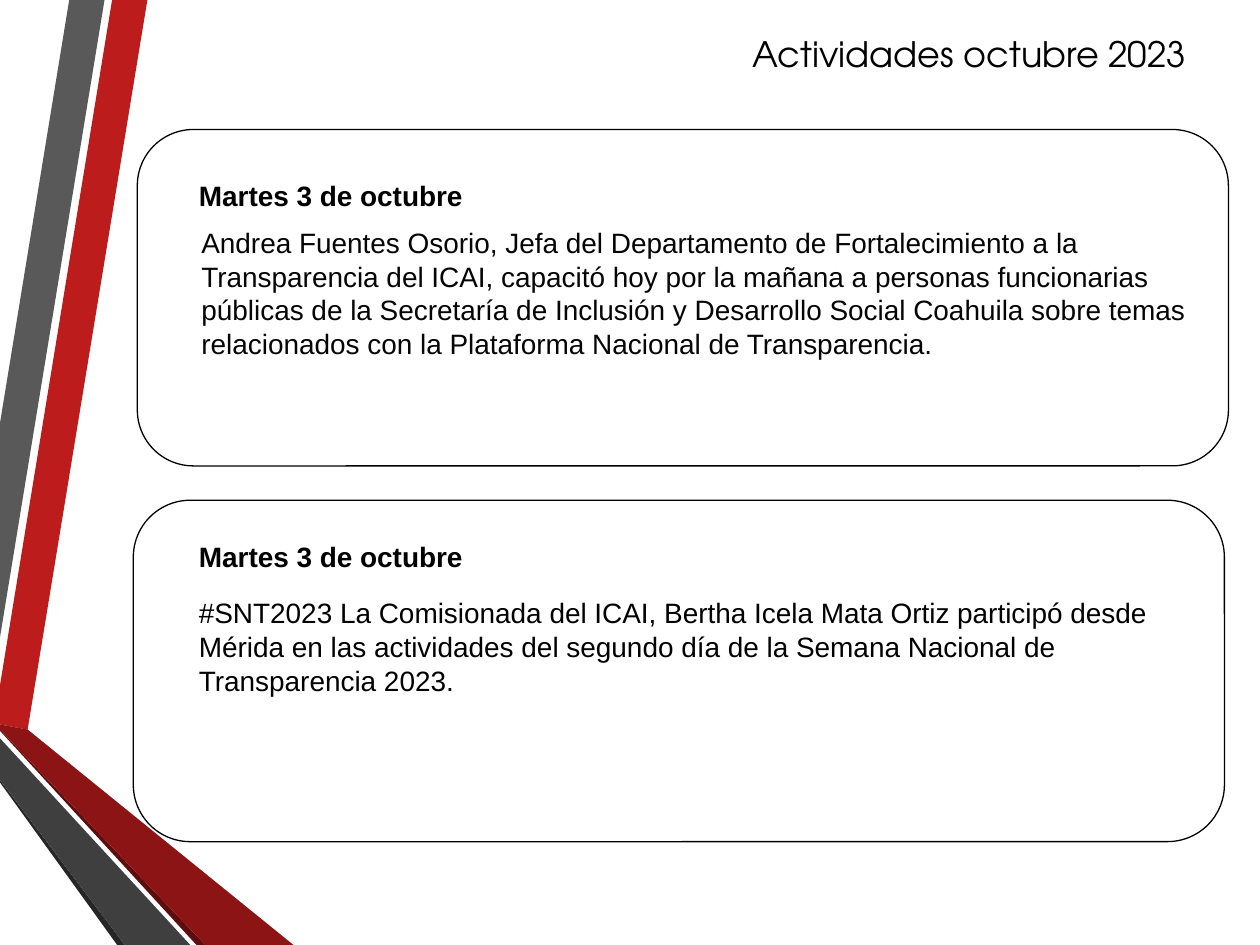
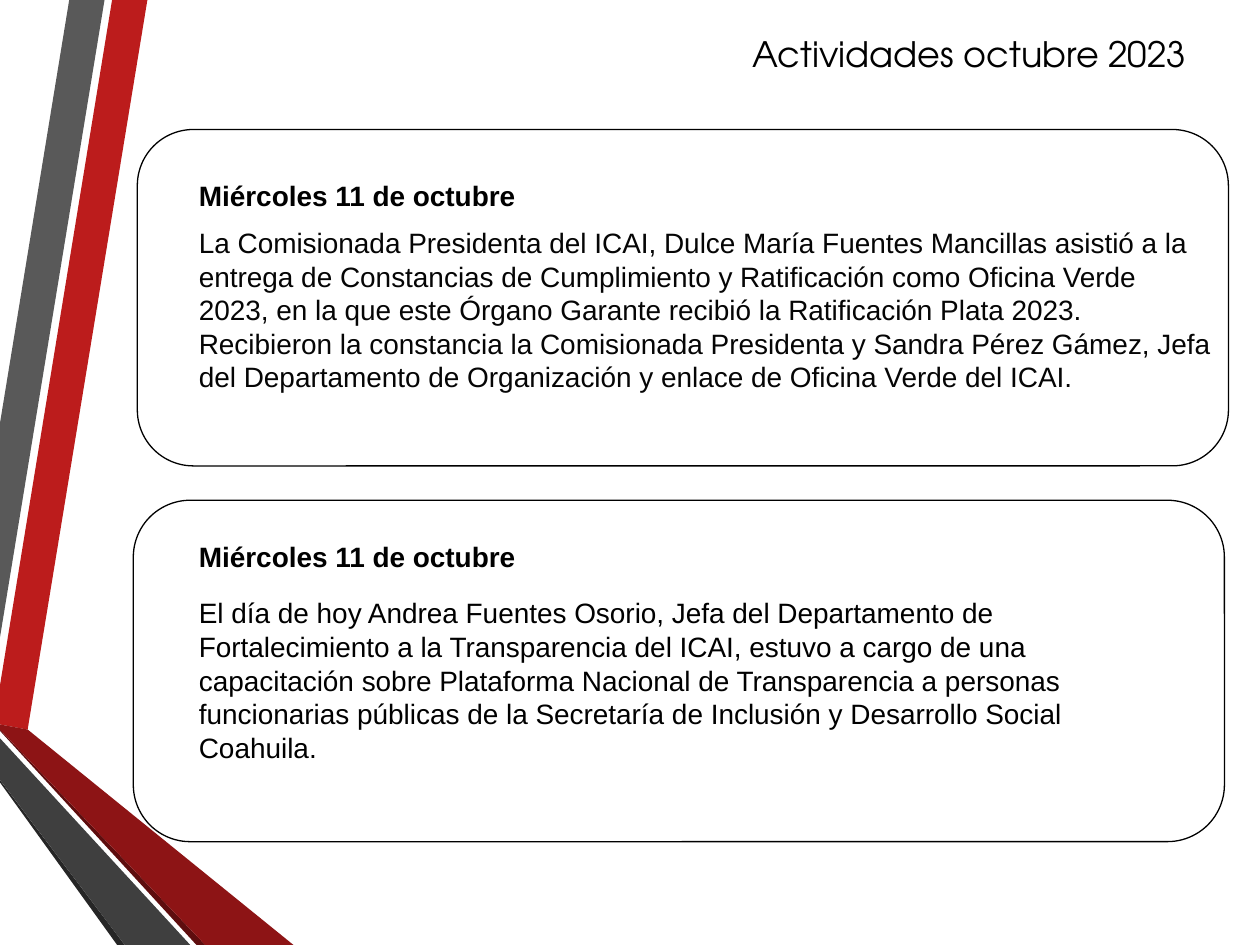
import pptx
import pptx.util
import pptx.dml.color
import pptx.enum.shapes
import pptx.enum.text

Pt = pptx.util.Pt
RGB = pptx.dml.color.RGBColor
ALIGN = pptx.enum.text.PP_ALIGN

BLACK = RGB(0x00, 0x00, 0x00)
INK = RGB(0x05, 0x05, 0x05)
RED = RGB(0xBC, 0x1C, 0x1C)
MAROON = RGB(0x8D, 0x14, 0x15)
WINE = RGB(0x5E, 0x0D, 0x0E)
GREY = RGB(0x59, 0x59, 0x59)
SLATE = RGB(0x3F, 0x3F, 0x3F)
COAL = RGB(0x26, 0x26, 0x26)

WIDTH, HEIGHT = 720, 540
BEND = (15.84, 416.88)  # where the red band folds
RIBBONS = [
    (RED, [(0, 391.68), (0, 414), BEND, (84.24, 0), (64.08, 0)]),
    (GREY, [(59.76, 0), (39.6, 0), (0, 241.92), (0, 364.32)]),
    (COAL, [(0, 445.68), (0, 447.12), (66.96, HEIGHT), (71.28, HEIGHT)]),
    (WINE, [(0, 416.88), (0, 417.6), (112.32, HEIGHT), (117.36, HEIGHT)]),
    (MAROON, [(0, 416.88), (117.36, HEIGHT), (167.76, HEIGHT), BEND, (0, 414)]),
    (SLATE, [(0, 445.68), (71.28, HEIGHT), (108.72, HEIGHT), (0, 421.92)]),
]

LEFT = 106.56
CARD_WIDTH = 623.5
TEXT_WIDTH = 567.36
WIDE = 593.28  # the upper text runs almost to the card's edge


class Deck:
    def __init__(self):
        self.prs = pptx.Presentation()
        self.prs.slide_width = Pt(WIDTH)
        self.prs.slide_height = Pt(HEIGHT)
        self.slide = None

    def page(self, title):
        """Start a slide with the side ribbons and its title."""
        self.slide = self.prs.slides.add_slide(self.prs.slide_layouts[6])
        for color, points in RIBBONS:
            self.ribbon(color, points)
        self.text(405.36, 15.12, 297.36, 31.68, [title], size=20,
                  font="TeX Gyre Adventor", align=ALIGN.CENTER)

    def ribbon(self, color, points):
        start, *rest = [(Pt(x), Pt(y)) for x, y in points]
        pen = self.slide.shapes.build_freeform(*start)
        pen.add_line_segments(rest, close=True)
        shape = pen.convert_to_shape()
        shape.shadow.inherit = False
        shape.fill.solid()
        shape.fill.fore_color.rgb = color
        shape.line.fill.background()

    def card(self, left, top, height):
        kind = pptx.enum.shapes.MSO_SHAPE.FLOWCHART_ALTERNATE_PROCESS
        shape = self.slide.shapes.add_shape(
            kind, Pt(left), Pt(top), Pt(CARD_WIDTH), Pt(height))
        shape.shadow.inherit = False
        shape.fill.background()
        shape.line.color.rgb = BLACK
        shape.line.width = Pt(0.75)

    def text(self, left, top, width, height, lines, size=16, font="Arial",
             color=BLACK, bold=False, align=ALIGN.LEFT):
        box = self.slide.shapes.add_textbox(
            Pt(left), Pt(top), Pt(width), Pt(height))
        frame = box.text_frame
        frame.word_wrap = True
        frame.text = "\n".join(lines)
        for para in frame.paragraphs:
            para.alignment = align
            para.font.size = Pt(size)
            para.font.name = font
            para.font.bold = bold
            para.font.color.rgb = color


PAGES = [
    {
        "date": "Martes 3 de octubre",
        "left": 108,
        "height": 84.96,
        "upper": [
            "Andrea Fuentes Osorio, Jefa del Departamento de Fortalecimiento "
            "a la Transparencia del ICAI, capacitó hoy por la mañana a "
            "personas funcionarias públicas de la Secretaría de Inclusión y "
            "Desarrollo Social Coahuila sobre temas relacionados con la "
            "Plataforma Nacional de Transparencia."],
        "lower": [
            "#SNT2023 La Comisionada del ICAI, Bertha Icela Mata Ortiz "
            "participó desde Mérida en las actividades del segundo día de la "
            "Semana Nacional de Transparencia 2023."],
    },
    {
        "date": "Miércoles 11 de octubre",
        "left": LEFT,
        "height": 104.4,
        "upper": [
            "La Comisionada Presidenta del ICAI, Dulce María Fuentes "
            "Mancillas asistió a la entrega de Constancias de Cumplimiento y "
            "Ratificación como Oficina Verde 2023, en la que este Órgano "
            "Garante recibió la Ratificación Plata 2023.",
            "Recibieron la constancia la Comisionada Presidenta y Sandra "
            "Pérez Gámez, Jefa del Departamento de Organización y enlace de "
            "Oficina Verde del ICAI."],
        "lower": [
            "El día de hoy Andrea Fuentes Osorio, Jefa del Departamento de "
            "Fortalecimiento a la Transparencia del ICAI, estuvo a cargo de "
            "una capacitación sobre Plataforma Nacional de Transparencia a "
            "personas funcionarias públicas de la Secretaría de Inclusión y "
            "Desarrollo Social Coahuila."],
    },
]


def main():
    deck = Deck()
    for page in PAGES:
        deck.page("Actividades octubre 2023")
        deck.card(78.48, 74, 192.24)
        deck.card(76.2, 285.84, 195.12)
        for top, height in ((98.64, 26.64), (304.56, 46.08)):
            deck.text(LEFT, top, TEXT_WIDTH, height, [page["date"]], bold=True)
        deck.text(page["left"], 125.28, WIDE, page["height"], page["upper"],
                  color=INK)
        deck.text(LEFT, 336.96, TEXT_WIDTH, page["height"], page["lower"])
    deck.prs.save("out.pptx")


if __name__ == "__main__":
    main()
